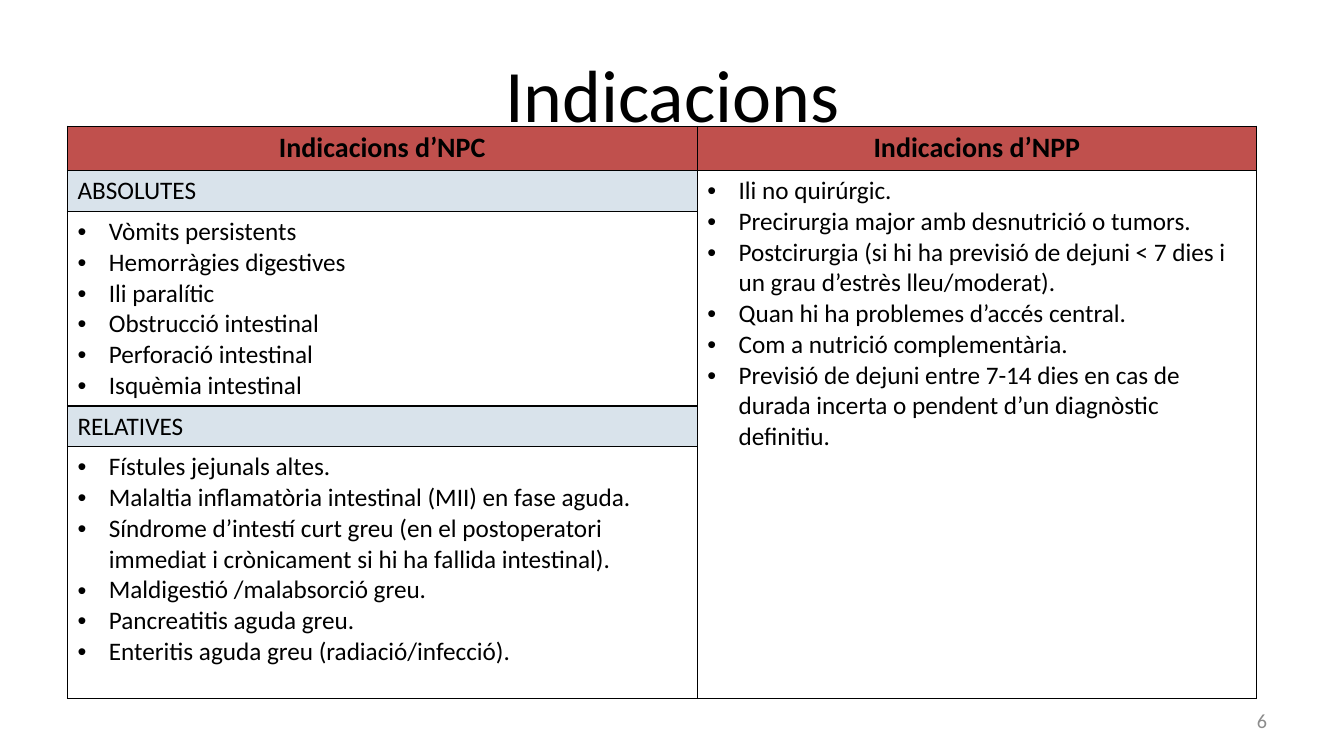
from lxml.etree import SubElement
from pptx import Presentation
from pptx.dml.color import RGBColor
from pptx.enum.text import MSO_ANCHOR as Anchor, PP_ALIGN as Align
from pptx.oxml.ns import qn
from pptx.util import Cm, Pt

BLACK = RGBColor(0x00, 0x00, 0x00)
WHITE = RGBColor(0xFF, 0xFF, 0xFF)
GREY = RGBColor(0x8C, 0x8C, 0x8C)
RED = RGBColor(0xC0, 0x50, 0x4D)
PALE_BLUE = RGBColor(0xD9, 0xE3, 0xEB)
FONT = "Calibri"

COLUMN_WIDTHS = [Cm(15.87), Cm(14.1)]
ROW_HEIGHTS = [Cm(1.12), Cm(1.03), Cm(4.9), Cm(1.03), Cm(6.35)]

ABSOLUTE = [
    "Vòmits persistents",
    "Hemorràgies digestives",
    "Ili paralític",
    "Obstrucció intestinal",
    "Perforació intestinal",
    "Isquèmia intestinal",
]
RELATIVE = [
    "Fístules jejunals altes.",
    "Malaltia inflamatòria intestinal (MII) en fase aguda.",
    "Síndrome d’intestí curt greu (en el postoperatori immediat i "
    "crònicament si hi ha fallida intestinal).",
    "Maldigestió /malabsorció greu.",
    "Pancreatitis aguda greu.",
    "Enteritis aguda greu (radiació/infecció).",
]
PERIPHERAL = [
    "Ili no quirúrgic.",
    "Precirurgia major amb desnutrició o tumors.",
    "Postcirurgia (si hi ha previsió de dejuni < 7 dies i un grau "
    "d’estrès lleu/moderat).",
    "Quan hi ha problemes d’accés central.",
    "Com a nutrició complementària.",
    "Previsió de dejuni entre 7-14 dies en cas de durada incerta o "
    "pendent d’un diagnòstic definitiu.",
]


def write(frame, lines, size, align=Align.LEFT, color=BLACK, bold=False):
    frame.text = "\n".join(lines)
    for paragraph in frame.paragraphs:
        paragraph.alignment = align
        for run in paragraph.runs:
            run.font.name = FONT
            run.font.size = Pt(size)
            run.font.bold = bold
            run.font.color.rgb = color


def add_label(slide, text, left, top, width, height, size, align, color):
    label = slide.shapes.add_textbox(left, top, width, height)
    frame = label.text_frame
    frame.word_wrap = True
    frame.vertical_anchor = Anchor.MIDDLE
    write(frame, [text], size, align, color)


def add_bullets(frame):
    for paragraph in frame.paragraphs:
        properties = paragraph._p.get_or_add_pPr()
        properties.set("marL", str(Cm(0.79)))
        properties.set("indent", str(-Cm(0.79)))
        SubElement(properties, qn("a:buFont"), typeface="Arial")
        SubElement(properties, qn("a:buChar"), char="•")


def add_borders(cell):
    properties = cell._tc.get_or_add_tcPr()
    for side in ("lnL", "lnR", "lnT", "lnB"):
        border = SubElement(properties, qn(f"a:{side}"), w=str(Pt(1)))
        fill = SubElement(border, qn("a:solidFill"))
        SubElement(fill, qn("a:srgbClr"), val=str(BLACK))


def paint(cell, color):
    cell.fill.solid()
    cell.fill.fore_color.rgb = color


def fill_header(cell, text):
    write(cell.text_frame, [text], 20, Align.CENTER, bold=True)
    paint(cell, RED)


def fill_section(cell, text):
    write(cell.text_frame, [text], 18)
    paint(cell, PALE_BLUE)


def fill_list(cell, items):
    write(cell.text_frame, items, 18)
    add_bullets(cell.text_frame)


def add_indications(slide):
    table = slide.shapes.add_table(
        len(ROW_HEIGHTS), len(COLUMN_WIDTHS), Cm(1.7), Cm(3.18),
        sum(COLUMN_WIDTHS), sum(ROW_HEIGHTS)).table
    table.first_row = False
    table.horz_banding = False
    for column, width in zip(table.columns, COLUMN_WIDTHS):
        column.width = width
    for row, height in zip(table.rows, ROW_HEIGHTS):
        row.height = height
    for cell in table.iter_cells():
        add_borders(cell)
        paint(cell, WHITE)
    table.cell(1, 1).merge(table.cell(4, 1))

    fill_header(table.cell(0, 0), "Indicacions d’NPC")
    fill_header(table.cell(0, 1), "Indicacions d’NPP")
    fill_section(table.cell(1, 0), "ABSOLUTES")
    fill_list(table.cell(2, 0), ABSOLUTE)
    fill_section(table.cell(3, 0), "RELATIVES")
    fill_list(table.cell(4, 0), RELATIVE)
    fill_list(table.cell(1, 1), PERIPHERAL)


def main():
    deck = Presentation()
    deck.slide_width = Cm(33.87)
    deck.slide_height = Cm(19.05)
    slide = deck.slides.add_slide(deck.slide_layouts[6])
    add_label(slide, "Indicacions", Cm(1.7), Cm(0.76), Cm(30.48), Cm(3.18),
              52.8, Align.CENTER, BLACK)
    add_indications(slide)
    add_label(slide, "6", Cm(24.28), Cm(17.65), Cm(7.9), Cm(1.02),
              14.4, Align.RIGHT, GREY)
    deck.save("out.pptx")


if __name__ == "__main__":
    main()
